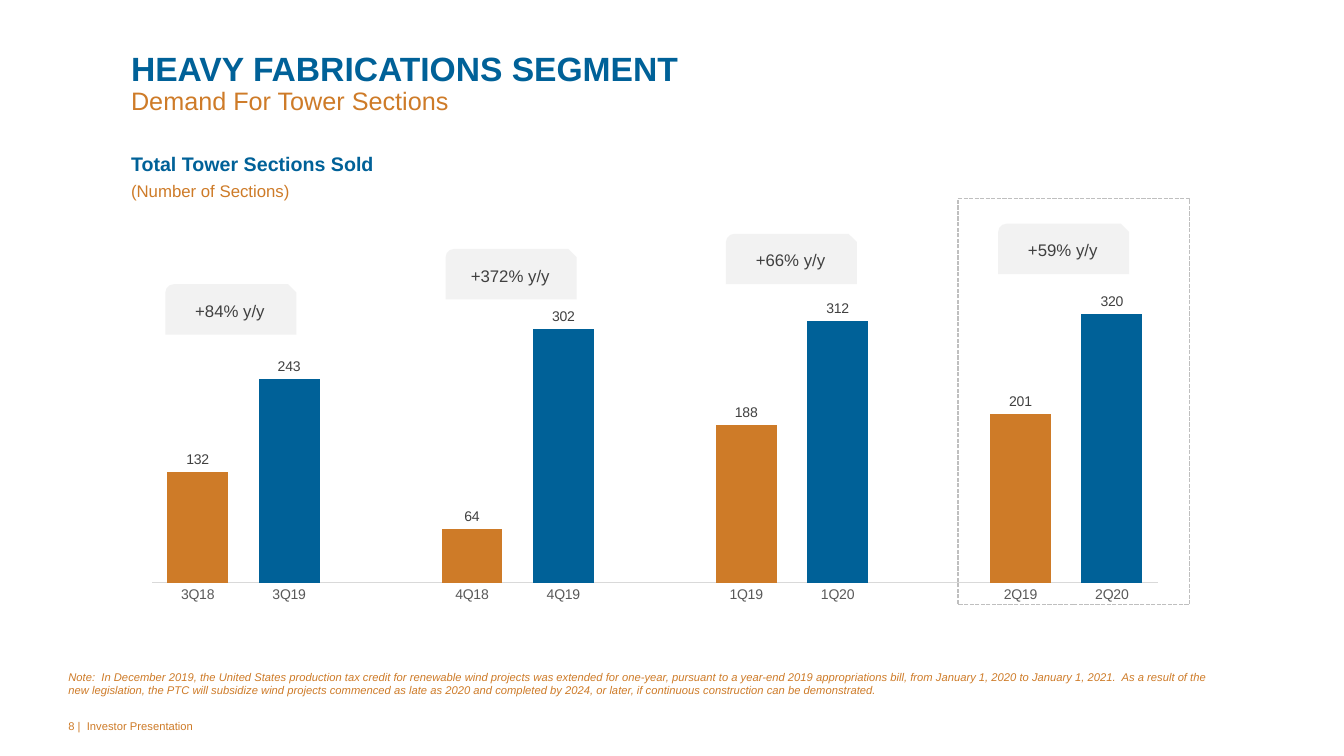
from lxml import etree
from pptx import Presentation
from pptx.chart.data import CategoryChartData
from pptx.dml.color import RGBColor
from pptx.enum.chart import XL_CHART_TYPE, XL_LABEL_POSITION, XL_TICK_MARK
from pptx.enum.dml import MSO_LINE
from pptx.enum.shapes import MSO_SHAPE
from pptx.enum.text import MSO_ANCHOR, MSO_AUTO_SIZE, PP_ALIGN
from pptx.oxml.ns import qn
from pptx.util import Inches, Pt

COLORS = {
    "blue": "006198", "orange": "CE7B28", "dark": "404040", "axis": "595959",
    "rule": "D9D9D9", "dash": "BFBFBF", "tag": "F2F2F2", "white": "FFFFFF",
}
SALES = [("3Q18", 132), ("3Q19", 243), ("", None),
         ("4Q18", 64), ("4Q19", 302), ("", None),
         ("1Q19", 188), ("1Q20", 312), ("", None),
         ("2Q19", 201), ("2Q20", 320)]
GROWTH = [("+84% y/y", 1.64, 2.82), ("+372% y/y", 4.42, 2.47),
          ("+66% y/y", 7.2, 2.32), ("+59% y/y", 9.9, 2.22)]
NOTE = ("Note:  In December 2019, the United States production tax credit for "
        "renewable wind projects was extended for one-year, pursuant to a "
        "year-end 2019 appropriations bill, from January 1, 2020 to January 1, "
        "2021.  As a result of the new legislation, the PTC will subsidize wind "
        "projects commenced as late as 2020 and completed by 2024, or later, if "
        "continuous construction can be demonstrated.")


def color(name):
    return RGBColor.from_string(COLORS[name])


def style(font, size, name, bold=False, italic=False):
    font.name = "Arial"
    font.size = Pt(size)
    font.bold = bold
    font.italic = italic
    font.color.rgb = color(name)


def inset(frame):
    frame.margin_left = frame.margin_right = 0
    frame.margin_top = frame.margin_bottom = 0


def add_title(slide):
    title = slide.shapes.title
    title.left, title.top = Inches(1.3), Inches(0.52)
    title.width, title.height = Inches(10.81), Inches(0.63)
    frame = title.text_frame
    frame.auto_size = MSO_AUTO_SIZE.NONE
    frame.vertical_anchor = MSO_ANCHOR.BOTTOM
    inset(frame)
    para = frame.paragraphs[0]
    para.text = "HEAVY FABRICATIONS SEGMENT\vDemand For Tower Sections"
    para.alignment = PP_ALIGN.LEFT
    para.line_spacing = 0.9
    head, sub = para.runs
    style(head.font, 24, "blue", bold=True)
    style(sub.font, 18, "orange")


def add_note(slide, text, top, width, italic=False):
    box = slide.shapes.add_textbox(
        Inches(0.58), Inches(top), Inches(width), Inches(0.4))
    frame = box.text_frame
    frame.word_wrap = True
    frame.vertical_anchor = MSO_ANCHOR.MIDDLE
    frame.text = text
    style(frame.paragraphs[0].runs[0].font, 8, "orange", italic=italic)


def add_block(slide, kind, left, top, width, height, fill=None):
    shape = slide.shapes.add_shape(
        kind, Inches(left), Inches(top), Inches(width), Inches(height))
    shape.shadow.inherit = False
    shape.line.fill.background()
    if fill:
        shape.fill.solid()
        shape.fill.fore_color.rgb = color(fill)
    else:
        shape.fill.background()
    return shape


def add_heading(slide):
    shape = add_block(slide, MSO_SHAPE.RECTANGLE, 1.3, 1.51, 6.23, 0.48, "white")
    frame = shape.text_frame
    frame.vertical_anchor = MSO_ANCHOR.TOP
    inset(frame)
    frame.text = "Total Tower Sections Sold\n(Number of Sections)"
    looks = [(14, "blue", True), (12, "orange", False)]
    for para, look in zip(frame.paragraphs, looks):
        para.alignment = PP_ALIGN.LEFT
        para.space_after = Pt(3.3)
        style(para.runs[0].font, *look)


def add_tag(slide, text, left, top):
    shape = add_block(
        slide, MSO_SHAPE.SNIP_ROUND_RECTANGLE, left, top, 1.3, 0.5, "tag")
    frame = shape.text_frame
    frame.vertical_anchor = MSO_ANCHOR.MIDDLE
    frame.text = text
    frame.paragraphs[0].alignment = PP_ALIGN.CENTER
    style(frame.paragraphs[0].runs[0].font, 12, "dark")


def add_frame(slide):
    line = add_block(slide, MSO_SHAPE.RECTANGLE, 9.5, 1.97, 2.3, 4.03).line
    line.color.rgb = color("dash")
    line.width = Pt(1)
    line.dash_style = MSO_LINE.SQUARE_DOT


def set_plot(chart, **sizes):
    area = chart.plots[0]._element.getparent()
    for old in area.findall(qn("c:layout")):
        area.remove(old)
    layout = etree.Element(qn("c:layout"))
    manual = etree.SubElement(layout, qn("c:manualLayout"))
    modes = {"layoutTarget": "inner", "xMode": "edge", "yMode": "edge"}
    for tag, value in {**modes, **sizes}.items():
        etree.SubElement(manual, qn("c:" + tag)).set("val", str(value))
    area.insert(0, layout)


def add_sales(slide):
    data = CategoryChartData()
    data.categories = [name for name, _ in SALES]
    data.add_series("Series 1", [value for _, value in SALES])
    chart = slide.shapes.add_chart(
        XL_CHART_TYPE.COLUMN_CLUSTERED, Inches(1.3), Inches(2.8),
        Inches(10.39), Inches(3.24), data).chart
    chart.has_legend = chart.has_title = False
    chart.font.name = "Arial"
    chart.font.size = Pt(10)
    set_plot(chart, x=0.02, y=0.02, w=0.96, h=0.9)

    scale = chart.value_axis
    scale.visible = scale.has_major_gridlines = False
    scale.minimum_scale, scale.maximum_scale = 0, 350
    axis = chart.category_axis
    axis.major_tick_mark = axis.minor_tick_mark = XL_TICK_MARK.NONE
    style(axis.tick_labels.font, 10, "axis")
    axis.format.line.color.rgb = color("rule")
    axis.format.line.width = Pt(0.75)

    plot = chart.plots[0]
    plot.vary_by_categories = False
    plot.gap_width, plot.overlap = 50, -27
    series = plot.series[0]
    series.format.fill.solid()
    series.format.fill.fore_color.rgb = color("blue")
    for index in range(0, len(SALES), 3):
        fill = series.points[index].format.fill
        fill.solid()
        fill.fore_color.rgb = color("orange")
    labels = series.data_labels
    labels.show_value = True
    labels.position = XL_LABEL_POSITION.OUTSIDE_END
    style(labels.font, 10, "dark")


def main():
    deck = Presentation()
    deck.slide_width, deck.slide_height = Inches(13.33), Inches(7.5)
    slide = deck.slides.add_slide(deck.slide_layouts[5])
    add_title(slide)
    add_note(slide, "8 |  Investor Presentation", 7, 3)
    add_heading(slide)
    add_note(slide, NOTE, 6.58, 11.54, italic=True)
    for text, left, top in GROWTH:
        add_tag(slide, text, left, top)
    add_frame(slide)
    add_sales(slide)
    deck.save("out.pptx")


if __name__ == "__main__":
    main()
